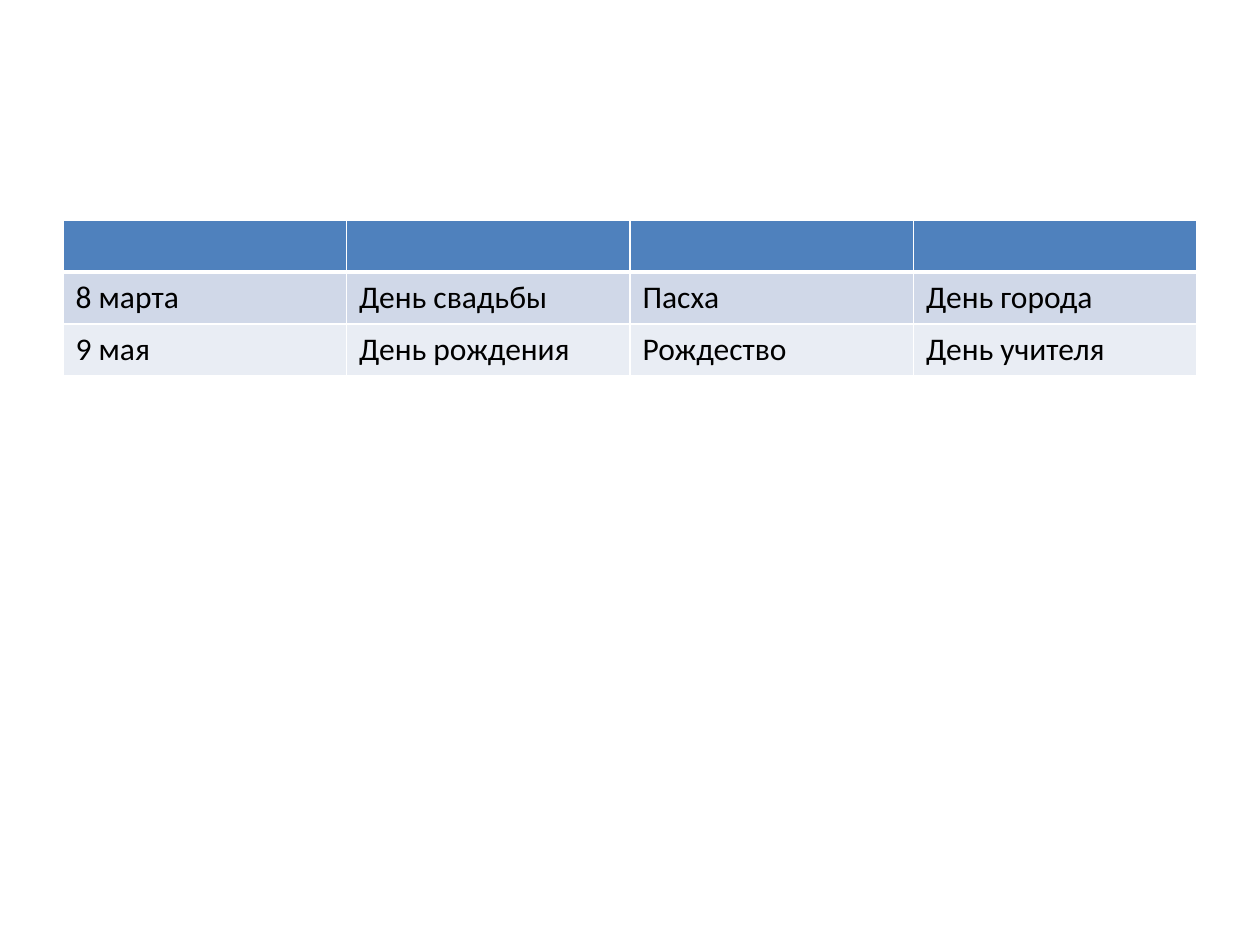
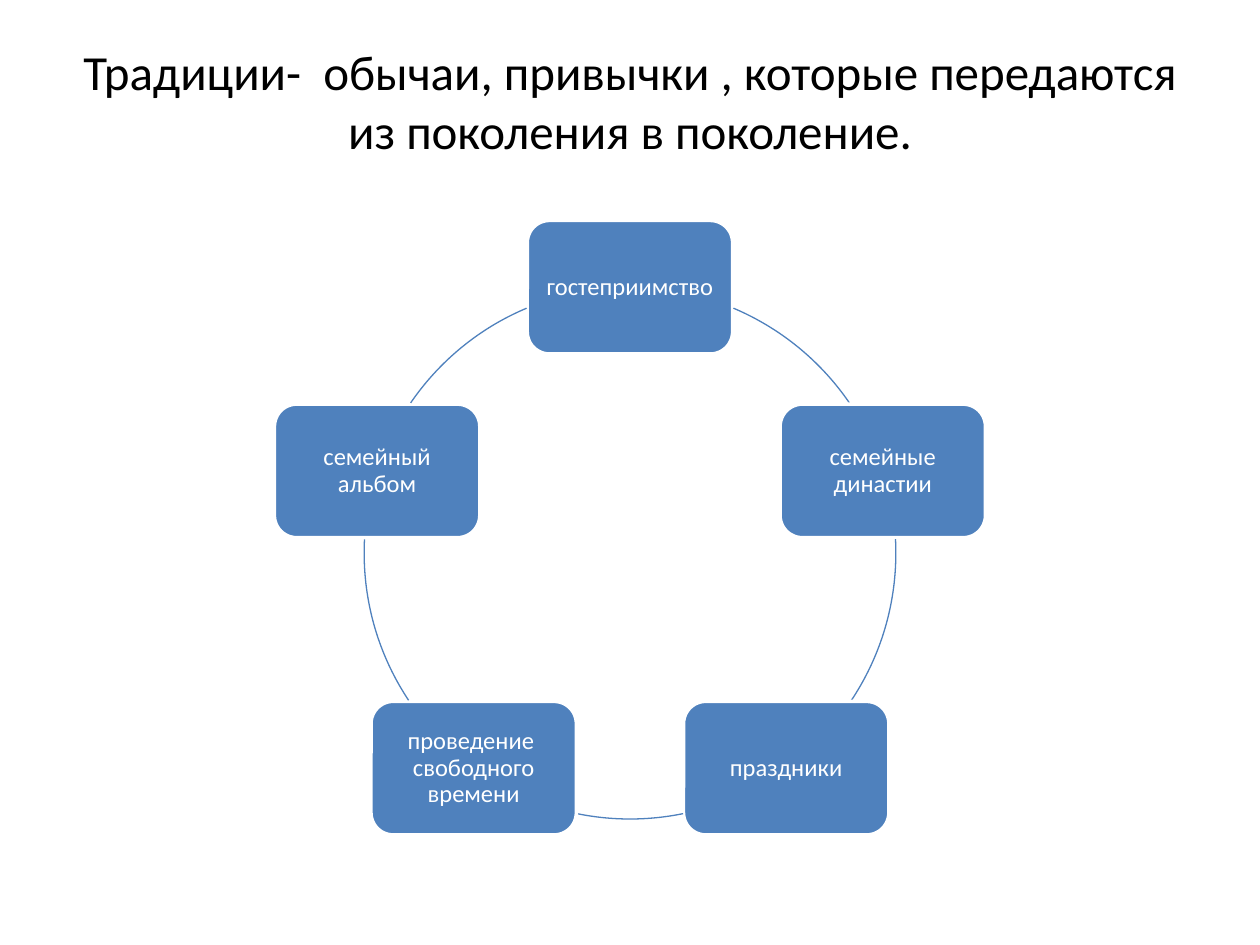
from math import cos, radians, sin
from typing import NamedTuple

from lxml.etree import SubElement
from pptx import Presentation
from pptx.dml.color import RGBColor
from pptx.enum.shapes import MSO_SHAPE as Preset
from pptx.enum.text import MSO_ANCHOR as Anchor, PP_ALIGN as Align
from pptx.oxml.ns import qn
from pptx.slide import Slide
from pptx.table import _Cell as Cell
from pptx.text.text import TextFrame
from pptx.util import Pt

PX = 9144  # 100 px to the inch
FONT = "Calibri"
BLACK = RGBColor(0x00, 0x00, 0x00)
WHITE = RGBColor(0xFF, 0xFF, 0xFF)
BLUE = RGBColor(0x4F, 0x81, 0xBD)
BAND_DARK = RGBColor(0xD0, 0xD8, 0xE8)
BAND_LIGHT = RGBColor(0xE9, 0xED, 0xF4)

RING_X, RING_Y, RING_RADIUS = 500, 439, 211
NODE_WIDTH, NODE_HEIGHT, NODE_MARGIN = 163, 106, 6
COLUMN_WIDTH, ROW_HEIGHT = 225, 41


class Band(NamedTuple):
    fill: RGBColor
    top_border: int
    bottom_border: int
    holidays: tuple[str, ...]


class Tradition(NamedTuple):
    """A node of the ring and the arc, in degrees, that follows it."""
    text: str
    arc_start: float
    arc_end: float


HOLIDAY_BANDS = (
    Band(BLUE, 1, 3, ("", "", "", "")),
    Band(BAND_DARK, 3, 1, ("8 марта", "День свадьбы", "Пасха", "День города")),
    Band(BAND_LIGHT, 1, 1, ("9 мая", "День рождения", "Рождество", "День учителя")),
)

TRADITIONS = (
    Tradition("гостеприимство", 292.9, 325.6),
    Tradition("семейные династии", 357, 33.6),
    Tradition("праздники", 78.5, 101.5),
    Tradition("проведение  свободного времени", 146.4, 183),
    Tradition("семейный альбом", 214.4, 247.1),
)


def px(*lengths: float) -> list[int]:
    return [round(length * PX) for length in lengths]


def write_text(frame: TextFrame, text: str, *, size: int, color: RGBColor = BLACK,
               align: Align = Align.LEFT, line_spacing: float = 1.0) -> None:
    frame.word_wrap = True
    paragraph = frame.paragraphs[0]
    paragraph.alignment = align
    paragraph.line_spacing = line_spacing
    run = paragraph.add_run()
    run.text = text
    run.font.name = FONT
    run.font.size = Pt(size)
    run.font.color.rgb = color


def set_borders(cell: Cell, top: int, bottom: int) -> None:
    """Give the cell white borders; must run before its fill is set."""
    properties = cell._tc.get_or_add_tcPr()
    for side, width in (("L", 1), ("R", 1), ("T", top), ("B", bottom)):
        line = SubElement(properties, qn(f"a:ln{side}"), w=str(Pt(width)))
        fill = SubElement(line, qn("a:solidFill"))
        SubElement(fill, qn("a:srgbClr"), val=str(WHITE))


def draw_holidays(slide: Slide) -> None:
    rows, columns = len(HOLIDAY_BANDS), len(HOLIDAY_BANDS[0].holidays)
    table = slide.shapes.add_table(
        rows, columns, *px(50, 175, columns * COLUMN_WIDTH, rows * ROW_HEIGHT)).table
    table.first_row = table.horz_banding = False
    for row, band in enumerate(HOLIDAY_BANDS):
        for column, holiday in enumerate(band.holidays):
            cell = table.cell(row, column)
            set_borders(cell, band.top_border, band.bottom_border)
            cell.fill.solid()
            cell.fill.fore_color.rgb = band.fill
            if holiday:
                write_text(cell.text_frame, holiday, size=18)


def draw_title(slide: Slide, text: str) -> None:
    frame = slide.shapes.add_textbox(*px(50, 17, 900, 125)).text_frame
    frame.vertical_anchor = Anchor.MIDDLE
    write_text(frame, text, size=28, align=Align.CENTER)


def draw_node(slide: Slide, text: str, angle: float) -> None:
    left = RING_X + RING_RADIUS * cos(radians(angle)) - NODE_WIDTH / 2
    top = RING_Y + RING_RADIUS * sin(radians(angle)) - NODE_HEIGHT / 2
    node = slide.shapes.add_shape(
        Preset.ROUNDED_RECTANGLE, *px(left, top, NODE_WIDTH, NODE_HEIGHT))
    node.shadow.inherit = False
    node.fill.solid()
    node.fill.fore_color.rgb = BLUE
    node.line.color.rgb = WHITE
    node.line.width = Pt(2)
    frame = node.text_frame
    frame.vertical_anchor = Anchor.MIDDLE
    frame.margin_left = frame.margin_right = NODE_MARGIN * PX
    frame.margin_top = frame.margin_bottom = NODE_MARGIN * PX
    write_text(frame, text, size=14, color=WHITE, align=Align.CENTER, line_spacing=0.9)


def draw_arc(slide: Slide, start: float, end: float) -> None:
    arc = slide.shapes.add_shape(Preset.ARC, *px(
        RING_X - RING_RADIUS, RING_Y - RING_RADIUS, 2 * RING_RADIUS, 2 * RING_RADIUS))
    # A degree is 60000 units, and an adjustment of 1.0 is 100000 units.
    arc.adjustments[0] = start * 0.6
    arc.adjustments[1] = end * 0.6
    arc.shadow.inherit = False
    arc.fill.background()
    arc.line.color.rgb = BLUE
    arc.line.width = Pt(0.75)


def draw_traditions(slide: Slide) -> None:
    draw_title(slide, "Традиции-  обычаи, привычки , которые передаются "
                      "из поколения в поколение.")
    step = 360 / len(TRADITIONS)
    for index, tradition in enumerate(TRADITIONS):
        draw_node(slide, tradition.text, index * step - 90)
        draw_arc(slide, tradition.arc_start, tradition.arc_end)


def main() -> None:
    deck = Presentation()
    deck.slide_width, deck.slide_height = px(1000, 750)
    blank = deck.slide_layouts[6]
    for draw in (draw_holidays, draw_traditions):
        draw(deck.slides.add_slide(blank))
    deck.save("out.pptx")


if __name__ == "__main__":
    main()
